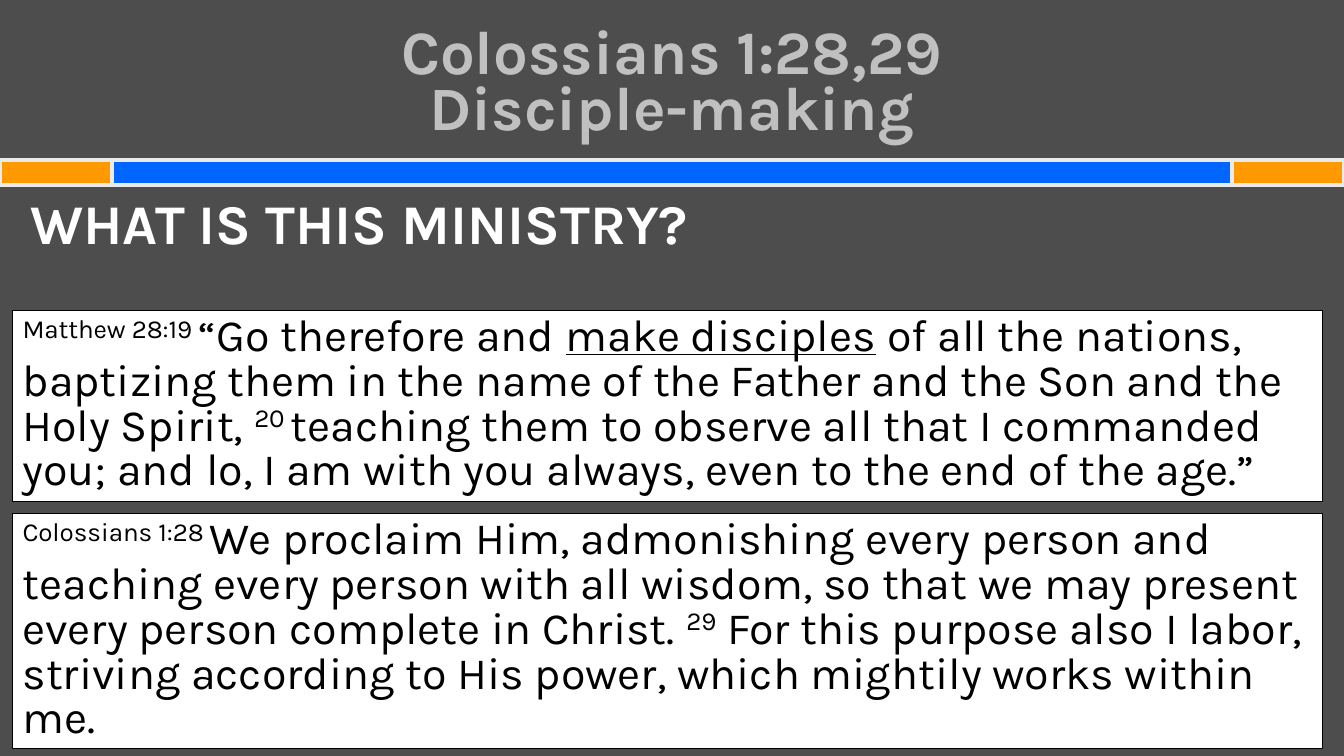
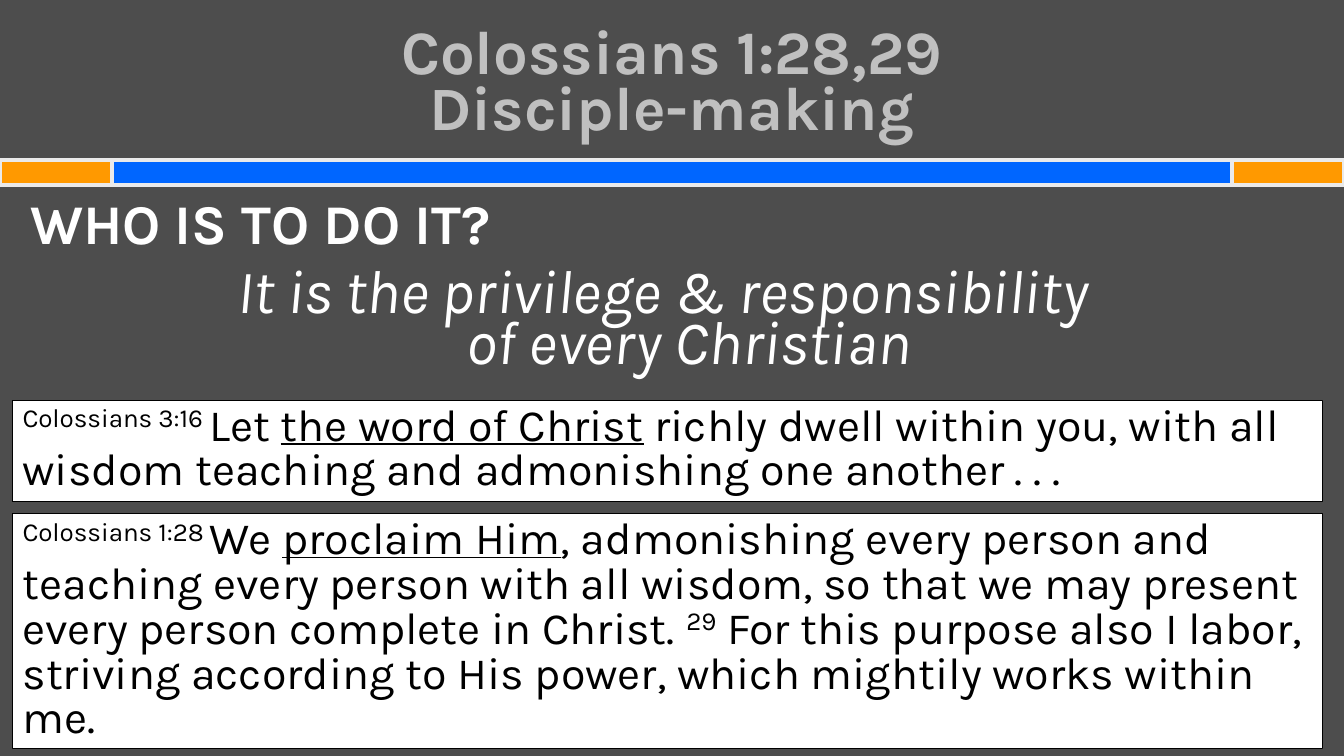
from dataclasses import dataclass

from lxml import etree
from pptx import Presentation
from pptx.dml.color import RGBColor
from pptx.enum import shapes, text
from pptx.oxml import ns
from pptx.util import Pt


@dataclass(frozen=True)
class Theme:
    font: str = "Karla"
    background: str = "4D4D4D"
    title: str = "C0C0C0"
    light: str = "FFFFFF"
    dark: str = "000000"
    bar: str = "0066FF"
    bar_end: str = "FF9900"
    bar_edge: str = "EAEAEA"
    display_size: int = 44
    question_size: int = 40
    verse_size: int = 32
    width: int = 960
    height: int = 540


THEME = Theme()
TITLE = "Colossians 1:28,29\nDisciple-making"

# Run styles within a verse
PLAIN, RAISED, UNDERLINED = "plain", "raised", "underlined"

# Bible passages: runs of (text, style)
MATTHEW_28 = [
    ("Matthew 28:19 ", RAISED),
    ("“Go therefore and ", PLAIN),
    ("make disciples", UNDERLINED),
    (" of all the nations, baptizing them in the name of the Father and the Son "
     "and the Holy Spirit, ", PLAIN),
    ("20 ", RAISED),
    ("teaching them to observe all that I commanded you; and lo, I am with you "
     "always, even to the end of the age.”", PLAIN),
]
COLOSSIANS_3 = [
    ("Colossians 3:16 ", RAISED),
    ("Let ", PLAIN),
    ("the word of Christ", UNDERLINED),
    (" richly dwell within you, with all wisdom teaching and admonishing one "
     "another . . .", PLAIN),
]


def colossians_1(proclaim_style):
    return [
        ("Colossians 1:28 ", RAISED),
        ("We ", PLAIN),
        ("proclaim Him", proclaim_style),
        (", admonishing every person and teaching every person with all wisdom, "
         "so that we may present every person complete in Christ. ", PLAIN),
        ("29", RAISED),
        (" For this purpose also I labor, striving according to His power, which "
         "mightily works within me.", PLAIN),
    ]


def rgb(color):
    return RGBColor.from_string(color)


def place(shape, left, top, width, height):
    shape.left, shape.top = Pt(left), Pt(top)
    shape.width, shape.height = Pt(width), Pt(height)


def style(paragraph, size, color, bold=False, italic=False):
    font = paragraph.font
    font.name, font.size = THEME.font, Pt(size)
    font.bold, font.italic = bold, italic
    font.color.rgb = rgb(color)


def add_box(slide, at, fill, line, line_width):
    box = slide.shapes.add_shape(shapes.MSO_SHAPE.RECTANGLE, *map(Pt, at))
    box.shadow.inherit = False
    box.fill.solid()
    box.fill.fore_color.rgb = rgb(fill)
    box.line.color.rgb = rgb(line)
    box.line.width = Pt(line_width)
    return box


def add_band(slide):
    """Blue bar across the slide with an orange block at each end."""
    top, height, end = 114, 18, 80
    for left, width, color in ((0, THEME.width, THEME.bar),
                               (0, end, THEME.bar_end),
                               (THEME.width - end, end, THEME.bar_end)):
        add_box(slide, (left, top, width, height), color, THEME.bar_edge, 3)


def set_title(slide):
    title = slide.shapes.title
    place(title, 48, 21.6, 864, 80.6)
    frame = title.text_frame
    frame.auto_size = text.MSO_AUTO_SIZE.NONE
    frame.vertical_anchor = text.MSO_ANCHOR.MIDDLE
    heading = frame.paragraphs[0]
    heading.text = TITLE
    heading.alignment = text.PP_ALIGN.CENTER
    heading.line_spacing = Pt(40)
    style(heading, THEME.display_size, THEME.title, bold=True)


def format_body_line(paragraph, size):
    """Hanging indent without bullet, tight lines, gap of 30% of the type size."""
    paragraph.line_spacing = 0.7
    paragraph.space_before = Pt(round(size * 0.3))
    properties = paragraph._p.get_or_add_pPr()
    properties.set("marL", str(Pt(27)))
    properties.set("indent", str(Pt(-27)))
    etree.SubElement(properties, ns.qn("a:buNone"))


def set_body(slide, question, answer):
    body = slide.placeholders[1]
    place(body, 14.4, 144, 928, 384)
    frame = body.text_frame
    frame.auto_size = text.MSO_AUTO_SIZE.NONE
    asking = frame.paragraphs[0]
    asking.text = question
    format_body_line(asking, THEME.question_size)
    style(asking, THEME.question_size, THEME.light, bold=True)
    if answer:
        reply = frame.add_paragraph()
        reply.text = answer
        reply.alignment = text.PP_ALIGN.CENTER
        format_body_line(reply, THEME.display_size)
        style(reply, THEME.display_size, THEME.light, italic=True)


def add_verse(slide, passage, bottom, lines):
    """White box whose height follows from its number of text lines."""
    height = lines * THEME.verse_size + 8
    box = add_box(slide, (9, bottom - height, 936, height),
                  THEME.light, THEME.dark, 0.75)
    frame = box.text_frame
    frame.word_wrap = True
    frame.auto_size = text.MSO_AUTO_SIZE.SHAPE_TO_FIT_TEXT
    frame.vertical_anchor = text.MSO_ANCHOR.TOP
    verse = frame.paragraphs[0]
    verse.alignment = text.PP_ALIGN.LEFT
    verse.line_spacing = Pt(THEME.verse_size)
    style(verse, THEME.verse_size, THEME.dark)
    for words, run_style in passage:
        run = verse.add_run()
        run.text = words
        if run_style == UNDERLINED:
            run.font.underline = True
        elif run_style == RAISED:
            run._r.get_or_add_rPr().set("baseline", "30000")


def add_question_slide(deck, question, answer, upper, upper_lines, lower):
    slide = deck.slides.add_slide(deck.slide_layouts[1])
    add_band(slide)
    set_title(slide)
    set_body(slide, question, answer)
    add_verse(slide, upper, bottom=358, lines=upper_lines)
    add_verse(slide, lower, bottom=535, lines=5)


def main():
    deck = Presentation()
    deck.slide_width, deck.slide_height = Pt(THEME.width), Pt(THEME.height)
    backdrop = deck.slide_master.background.fill
    backdrop.solid()
    backdrop.fore_color.rgb = rgb(THEME.background)

    add_question_slide(deck, "WHAT IS THIS MINISTRY?", None,
                       MATTHEW_28, 4, colossians_1(PLAIN))
    add_question_slide(deck, "WHO IS TO DO IT?",
                       "It is the privilege & responsibility \nof every Christian",
                       COLOSSIANS_3, 2, colossians_1(UNDERLINED))
    deck.save("out.pptx")


if __name__ == "__main__":
    main()
